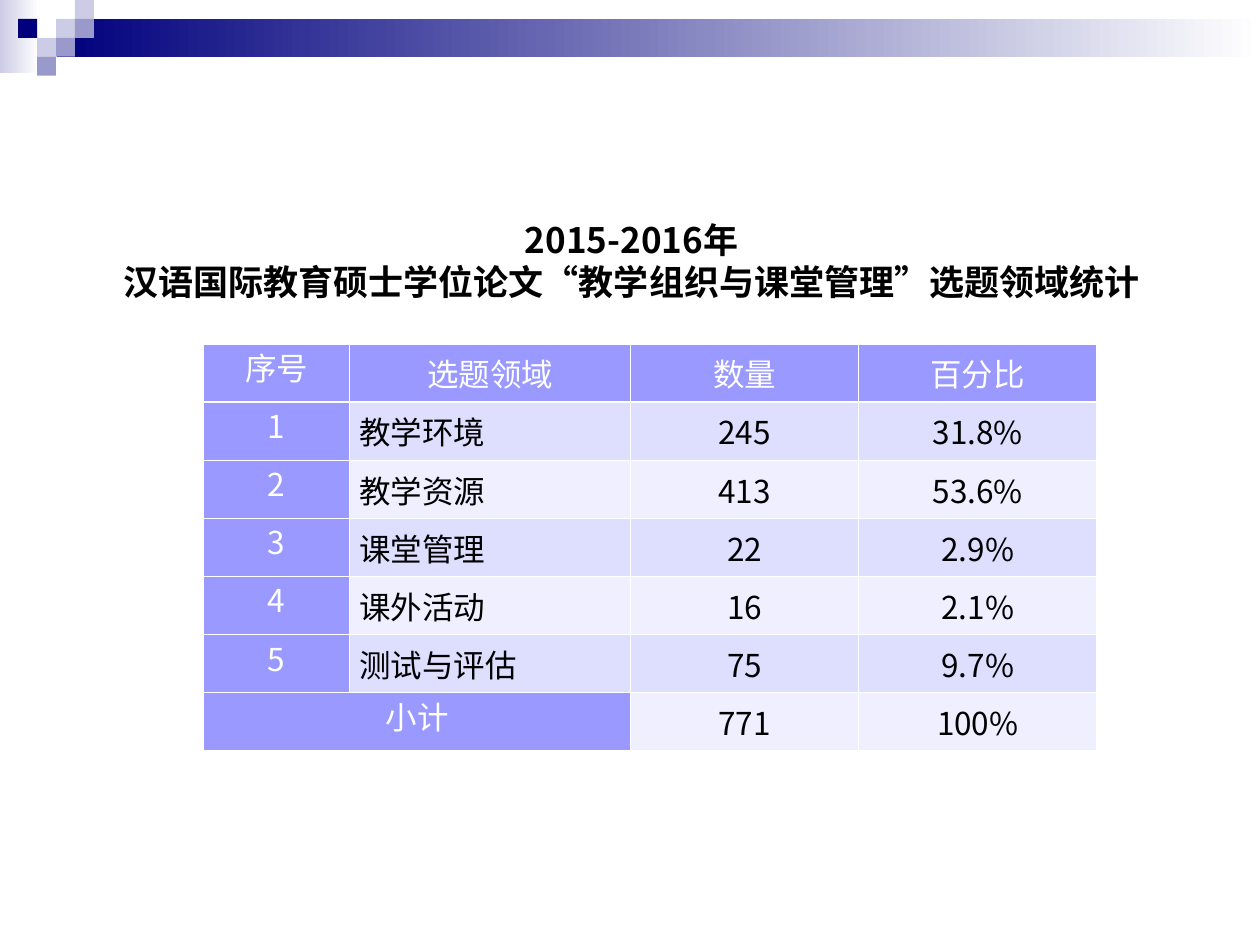
"""Build a slide with a statistics table of thesis topics."""
from lxml import etree
from pptx import Presentation
from pptx.dml.color import RGBColor
from pptx.enum import shapes, text
from pptx.oxml import ns
from pptx.util import Pt

FONT = "Noto Sans CJK SC"
WHITE = RGBColor(0xFF, 0xFF, 0xFF)
BLACK = RGBColor(0, 0, 0)
NAVY = RGBColor(0, 0, 0x7D)
PALE = RGBColor(0xCC, 0xCC, 0xE6)
MID = RGBColor(0x99, 0x99, 0xCC)
HEAD = RGBColor(0x99, 0x99, 0xFF)
BANDS = (RGBColor(0xDE, 0xDE, 0xFF), RGBColor(0xEF, 0xEF, 0xFF))

TILE = 10.8
TILES = [(3, 1, PALE), (4, 0, PALE), (4, 1, MID), (2, 2, PALE),
         (1, 1, NAVY), (3, 2, MID), (2, 3, MID)]
TITLE = ["2015-2016年", "汉语国际教育硕士学位论文“教学组织与课堂管理”选题领域统计"]
COLUMNS = [83.5, 160.6, 130.3, 136.1]
ROW_HEIGHT = 33.2
ROWS = [
    ["序号", "选题领域", "数量", "百分比"],
    ["1", "教学环境", "245", "31.8%"],
    ["2", "教学资源", "413", "53.6%"],
    ["3", "课堂管理", "22", "2.9%"],
    ["4", "课外活动", "16", "2.1%"],
    ["5", "测试与评估", "75", "9.7%"],
    ["小计", "", "771", "100%"],
]


def add_rect(s, left, top, width, height, color, end=None):
    """Add a borderless rectangle, fading to the end colour if one is given."""
    sp = s.shapes.add_shape(shapes.MSO_SHAPE.RECTANGLE,
                            Pt(left), Pt(top), Pt(width), Pt(height))
    sp.shadow.inherit = False
    sp.line.fill.background()
    if end is None:
        sp.fill.solid()
        sp.fill.fore_color.rgb = color
        return
    sp.fill.gradient()
    sp.fill.gradient_angle = 0
    for stop, rgb, position in zip(sp.fill.gradient_stops, (color, end), (0, 1)):
        stop.color.rgb = rgb
        stop.position = position


def format_paragraph(p, size, color, align, bold=False):
    """Align a paragraph and format its runs."""
    p.alignment = align
    for r in p.runs:
        r.font.size = Pt(size)
        r.font.bold = bold
        r.font.name = FONT
        r.font.color.rgb = color
        ea = etree.SubElement(r.font._element, ns.qn("a:ea"))
        ea.set("typeface", FONT)


def add_banner(s):
    """Draw the gradient bar and the mosaic of tiles at the top."""
    add_rect(s, 0, 0, 22.3, 41.8, PALE, WHITE)
    add_rect(s, 32.4, TILE, 687.6, 21.6, NAVY, WHITE)
    for column, row, color in TILES:
        add_rect(s, column * TILE - 0.4, row * TILE, TILE, TILE, color)


def set_title(s):
    """Place and format the two-line title."""
    sp = s.shapes.title
    sp.left, sp.top, sp.width, sp.height = Pt(59), Pt(121), Pt(604), Pt(55.4)
    tf = sp.text_frame
    tf.text = "\n".join(TITLE)
    tf.word_wrap = False
    tf.auto_size = text.MSO_AUTO_SIZE.SHAPE_TO_FIT_TEXT
    tf.vertical_anchor = text.MSO_ANCHOR.MIDDLE
    for p in tf.paragraphs:
        format_paragraph(p, 20, BLACK, text.PP_ALIGN.CENTER, bold=True)


def set_borders(cell):
    """Give a cell thin white borders on all sides."""
    tc_pr = cell._tc.get_or_add_tcPr()
    for side in ("lnL", "lnR", "lnT", "lnB"):
        ln = etree.SubElement(tc_pr, ns.qn(f"a:{side}"), w=str(Pt(1)))
        fill = etree.SubElement(ln, ns.qn("a:solidFill"))
        etree.SubElement(fill, ns.qn("a:srgbClr"), val=str(WHITE))


def format_cell(cell, row, column):
    """Style a cell by its place in the table."""
    is_head = row == 0 or column == 0
    is_topic = row > 0 and column == 1
    set_borders(cell)
    cell.fill.solid()
    cell.fill.fore_color.rgb = HEAD if is_head else BANDS[(row - 1) % 2]
    cell.margin_left = cell.margin_right = Pt(5.4)
    cell.margin_top = cell.margin_bottom = 0
    cell.vertical_anchor = text.MSO_ANCHOR.MIDDLE if column else text.MSO_ANCHOR.TOP
    format_paragraph(cell.text_frame.paragraphs[0], 18, WHITE if is_head else BLACK,
                     text.PP_ALIGN.LEFT if is_topic else text.PP_ALIGN.CENTER)


def add_statistics(s):
    """Add the statistics table with its merged subtotal label."""
    table = s.shapes.add_table(len(ROWS), len(COLUMNS), Pt(116.3), Pt(196.6),
                               Pt(sum(COLUMNS)), Pt(ROW_HEIGHT * len(ROWS))).table
    for column, width in zip(table.columns, COLUMNS):
        column.width = Pt(width)
    for i, values in enumerate(ROWS):
        table.rows[i].height = Pt(ROW_HEIGHT)
        for j, value in enumerate(values):
            cell = table.cell(i, j)
            cell.text = value
            format_cell(cell, i, j)
    last = len(ROWS) - 1
    table.cell(last, 0).merge(table.cell(last, 1))


def main():
    """Build and save the slide."""
    prs = Presentation()
    prs.slide_width, prs.slide_height = Pt(720), Pt(540)
    s = prs.slides.add_slide(prs.slide_layouts[5])
    add_banner(s)
    add_statistics(s)
    set_title(s)
    prs.save("out.pptx")


if __name__ == "__main__":
    main()
